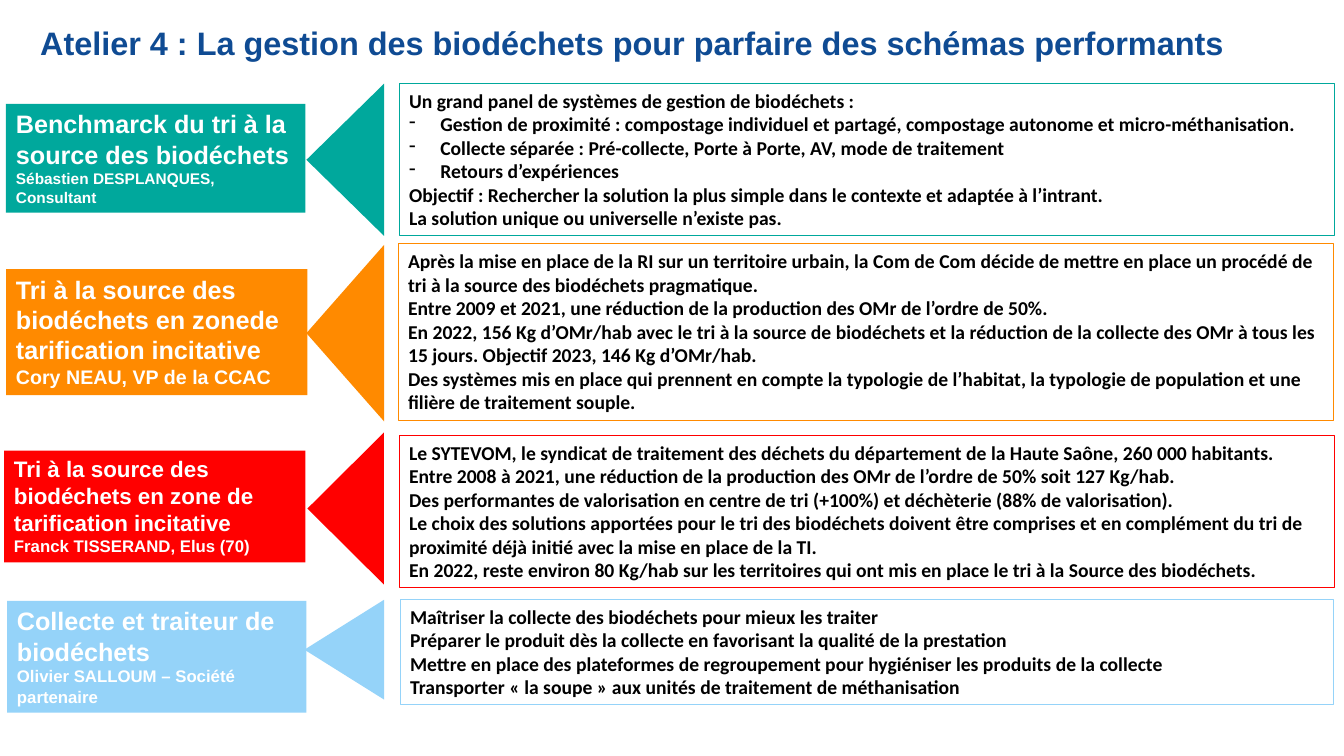
import pptx
import pptx.dml.color
import pptx.enum.shapes
import pptx.enum.text
import pptx.oxml
import pptx.oxml.ns
import pptx.util

SLIDE_COLUMNS, SLIDE_ROWS = 133.33, 75
CELL = pptx.util.Inches(0.1)
ARROW_RIGHT = 38.1
BULLET_INDENT = pptx.util.Inches(0.31)
TITLE = "Atelier 4 : La gestion des biodéchets pour parfaire des schémas performants"
SHAPES = pptx.enum.shapes.MSO_SHAPE
TITLE_FORMAT = {"name": "Arial", "size": 23.2, "color": "0F4B93"}
NOTE_FORMAT = {"name": "Calibri", "size": 14, "color": "000000"}

# Boxes are (left, top, width, height) in grid cells; arrows are (top, width, height).
# Note lines that start with "- " become bullets.
WORKSHOPS = [
    {
        "color": "00A89C",
        "label_box": (0.6, 10.3, 29.7, 10.8),
        "topic": ("Benchmarck du tri à la source des biodéchets", 18),
        "speaker": ("Sébastien DESPLANQUES, Consultant", 11),
        "arrow": (8.3, 7.7, 15.1),
        "note_box": (39.6, 8.3, 92.8, 15.1),
        "notes": [
            "Un grand panel de systèmes de gestion de biodéchets :",
            "- Gestion de proximité : compostage individuel et partagé, compostage autonome et micro-méthanisation.",
            "- Collecte séparée : Pré-collecte, Porte à Porte, AV, mode de traitement",
            "- Retours d’expériences",
            "Objectif : Rechercher la solution la plus simple dans le contexte et adaptée à l’intrant.",
            "La solution unique ou universelle n’existe pas.",
        ],
    },
    {
        "color": "FF8A00",
        "label_box": (0.6, 26.7, 29.9, 12.5),
        "topic": ("Tri à la source des biodéchets en zonede tarification incitative", 18),
        "speaker": ("Cory NEAU, VP de la CCAC", 14),
        "arrow": (24.3, 7.7, 17.5),
        "note_box": (39.5, 24.2, 92.8, 17.5),
        "notes": [
            "Après la mise en place de la RI sur un territoire urbain, la Com de Com décide de mettre en place "
            "un procédé de tri à la source des biodéchets pragmatique.",
            "Entre 2009 et 2021, une réduction de la production des OMr de l’ordre de 50%.",
            "En 2022, 156 Kg d’OMr/hab avec le tri à la source de biodéchets et la réduction de la collecte "
            "des OMr à tous les 15 jours. Objectif 2023, 146 Kg d’OMr/hab.",
            "Des systèmes mis en place qui prennent en compte la typologie de l’habitat, la typologie de "
            "population et une filière de traitement souple.",
        ],
    },
    {
        "color": "FF0000",
        "label_box": (0.4, 44.7, 29.9, 11.1),
        "topic": ("Tri à la source des biodéchets en zone de tarification incitative", 16),
        "speaker": ("Franck TISSERAND, Elus (70)", 12),
        "arrow": (42.9, 7.6, 15.1),
        "note_box": (39.6, 43.2, 92.8, 15.1),
        "notes": [
            "Le SYTEVOM, le syndicat de traitement des déchets du département de la Haute Saône, 260 000 habitants.",
            "Entre 2008 à 2021, une réduction de la production des OMr de l’ordre de 50% soit 127 Kg/hab.",
            "Des performantes de valorisation en centre de tri (+100%) et déchèterie (88% de valorisation).",
            "Le choix des solutions apportées pour le tri des biodéchets doivent être comprises et en "
            "complément du tri de proximité déjà initié avec la mise en place de la TI.",
            "En 2022, reste environ 80 Kg/hab sur les territoires qui ont mis en place le tri à la Source des biodéchets.",
        ],
    },
    {
        "color": "95D3F9",
        "label_box": (0.7, 59.6, 29.7, 11.1),
        "topic": ("Collecte et traiteur de biodéchets", 18),
        "speaker": ("Olivier SALLOUM – Société partenaire", 12),
        "arrow": (59.5, 7.9, 9.9),
        "note_box": (39.7, 59.5, 92.6, 10.4),
        "notes": [
            "Maîtriser la collecte des biodéchets pour mieux les traiter",
            "Préparer le produit dès la collecte en favorisant la qualité de la prestation",
            "Mettre en place des plateformes de regroupement pour hygiéniser les produits de la collecte",
            "Transporter « la soupe » aux unités de traitement de méthanisation",
        ],
    },
]


def cells(*counts):
    return [round(count * CELL) for count in counts]


def rgb(color):
    return pptx.dml.color.RGBColor.from_string(color)


def format_font(font, name, size, color):
    values = {"name": name, "size": pptx.util.Pt(size), "bold": True}
    for attribute, value in values.items():
        setattr(font, attribute, value)
    font.color.rgb = rgb(color)


def add_bullet(paragraph):
    """Give the paragraph a dash and a hanging indent."""
    properties = paragraph._p.get_or_add_pPr()
    properties.set("marL", str(BULLET_INDENT))
    properties.set("indent", str(-BULLET_INDENT))
    bullet = pptx.oxml.parse_xml(f'<a:buChar {pptx.oxml.ns.nsdecls("a")} char="-"/>')
    properties.append(bullet)


def write_lines(shape, lines):
    """Write (text, font format) pairs, one paragraph each, from the top left."""
    frame = shape.text_frame
    frame.word_wrap = True
    frame.vertical_anchor = pptx.enum.text.MSO_ANCHOR.TOP
    for index, (text, font_format) in enumerate(lines):
        paragraph = frame.add_paragraph() if index else frame.paragraphs[0]
        paragraph.alignment = pptx.enum.text.PP_ALIGN.LEFT
        if text.startswith("- "):
            add_bullet(paragraph)
        run = paragraph.add_run()
        run.text = text.removeprefix("- ")
        format_font(run.font, **font_format)


def add_panel(slide, kind, box, fill=None, line=None):
    shape = slide.shapes.add_shape(kind, *cells(*box))
    shape.shadow.inherit = False
    if fill:
        shape.fill.solid()
        shape.fill.fore_color.rgb = rgb(fill)
    else:
        shape.fill.background()
    if line:
        shape.line.color.rgb = rgb(line)
        shape.line.width = pptx.util.Pt(0.75)
    else:
        shape.line.fill.background()
    return shape


def add_left_arrow(slide, top, width, height, color):
    """Add a triangle pointing left; the lengths are those seen after rotation."""
    center_column, center_row = ARROW_RIGHT - width / 2, top + height / 2
    box = (center_column - height / 2, center_row - width / 2, height, width)
    add_panel(slide, SHAPES.ISOSCELES_TRIANGLE, box, fill=color).rotation = 270


def add_workshop(slide, workshop):
    color = workshop["color"]
    label = add_panel(slide, SHAPES.RECTANGLE, workshop["label_box"], fill=color)
    write_lines(label, [
        (text, {"name": "Arial", "size": size, "color": "FFFFFF"})
        for text, size in (workshop["topic"], workshop["speaker"])
    ])
    add_left_arrow(slide, *workshop["arrow"], color)
    notes = add_panel(slide, SHAPES.RECTANGLE, workshop["note_box"], line=color)
    write_lines(notes, [(text, NOTE_FORMAT) for text in workshop["notes"]])


def add_title(slide):
    title = slide.shapes.add_textbox(*cells(3, 2.8, 121.4, 6.2))
    write_lines(title, [(TITLE, TITLE_FORMAT)])
    title.text_frame.paragraphs[0].line_spacing = 0.7


def main():
    presentation = pptx.Presentation()
    presentation.slide_width, presentation.slide_height = cells(SLIDE_COLUMNS, SLIDE_ROWS)
    slide = presentation.slides.add_slide(presentation.slide_layouts[6])
    for workshop in WORKSHOPS:
        add_workshop(slide, workshop)
    add_title(slide)
    presentation.save("out.pptx")


if __name__ == "__main__":
    main()
